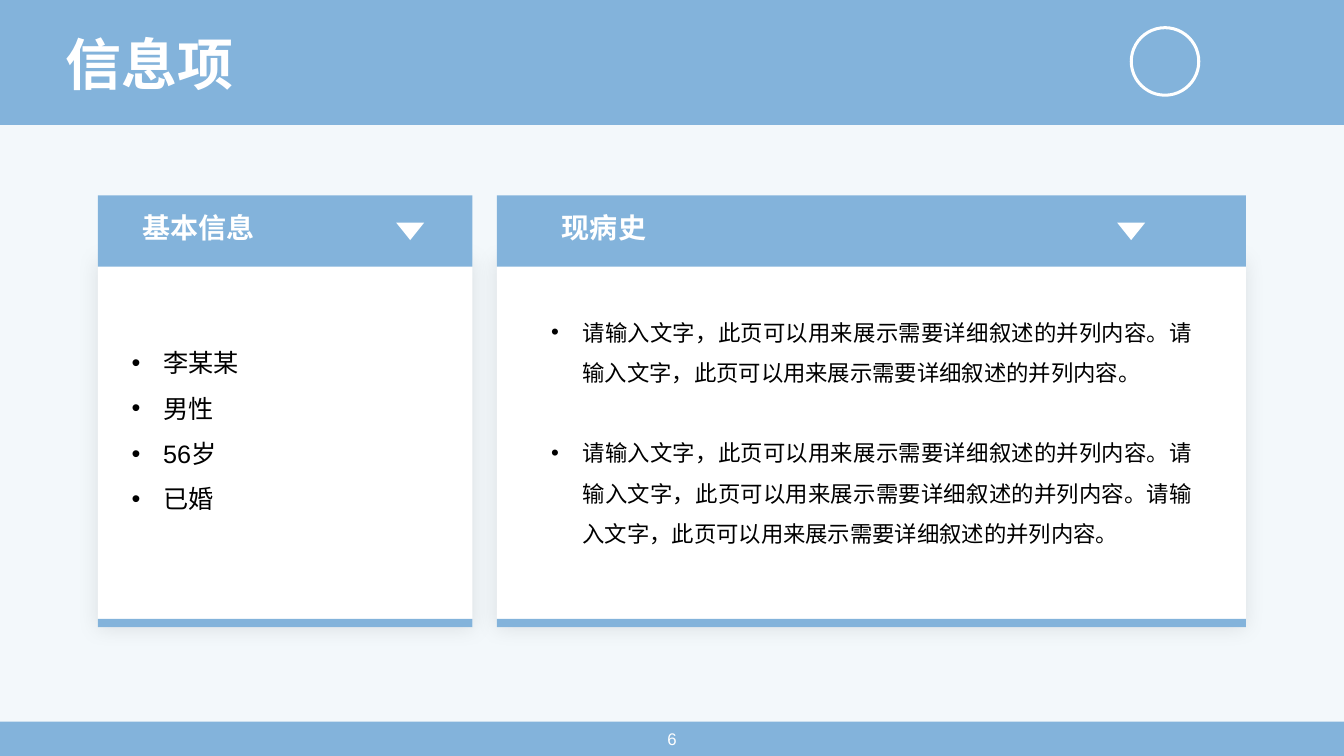
from lxml import etree
from pptx import Presentation
from pptx.dml.color import RGBColor
from pptx.enum.shapes import MSO_SHAPE
from pptx.enum.text import MSO_ANCHOR, MSO_AUTO_SIZE, PP_ALIGN
from pptx.oxml.ns import qn
from pptx.util import Pt

RECT, TRIANGLE, DONUT = MSO_SHAPE.RECTANGLE, MSO_SHAPE.ISOSCELES_TRIANGLE, MSO_SHAPE.DONUT
LEFT, CENTER, JUSTIFY = PP_ALIGN.LEFT, PP_ALIGN.CENTER, PP_ALIGN.JUSTIFY
TOP, MIDDLE = MSO_ANCHOR.TOP, MSO_ANCHOR.MIDDLE
NO_FIT, GROW = MSO_AUTO_SIZE.NONE, MSO_AUTO_SIZE.SHAPE_TO_FIT_TEXT

BLUE, WHITE, BLACK = "83B3DB", "FFFFFF", "000000"
CJK = "Noto Sans CJK SC"
INDENT = 22.5


def rgb(value):
    return RGBColor.from_string(value)


def add_node(parent, tag, **attributes):
    node = etree.SubElement(parent, qn(tag))
    for name, value in attributes.items():
        node.set(name, str(value))
    return node


class Deck:
    """Holds the style and the current slide."""

    def __init__(self, width, height, font="Arial"):
        self.prs = Presentation()
        self.prs.slide_width, self.prs.slide_height = Pt(width), Pt(height)
        self.font = font

    def new_slide(self, color):
        self.s = self.prs.slides.add_slide(self.prs.slide_layouts[6])
        fill = self.s.background.fill
        fill.solid()
        fill.fore_color.rgb = rgb(color)

    def shape(self, kind, x, y, w, h, color, alpha=None):
        sp = self.s.shapes.add_shape(kind, Pt(x), Pt(y), Pt(w), Pt(h))
        sp.shadow.inherit = False
        sp.fill.solid()
        sp.fill.fore_color.rgb = rgb(color)
        sp.line.fill.background()
        if alpha is not None:
            node = sp._element.spPr.find(".//" + qn("a:srgbClr"))
            add_node(node, "a:alpha", val=alpha * 1000)
        return sp

    def soft_shadow(self, sp, blur, alpha):
        effects = sp._element.spPr.find(qn("a:effectLst"))
        shadow = add_node(effects, "a:outerShdw", blurRad=Pt(blur), dist=0, dir=0,
                          algn="ctr", rotWithShape=0)
        color = add_node(shadow, "a:srgbClr", val=BLACK)
        add_node(color, "a:alpha", val=alpha * 1000)

    def text(self, x, y, w, h, lines, size, color, bold=False, align=LEFT, anchor=TOP,
             font=None, wrap=True, fit=NO_FIT, spacing=None, gap=0, bullet=False):
        tf = self.s.shapes.add_textbox(Pt(x), Pt(y), Pt(w), Pt(h)).text_frame
        tf.word_wrap, tf.auto_size, tf.vertical_anchor = wrap, fit, anchor
        for i, line in enumerate(lines):
            p = tf.paragraphs[0] if i == 0 else tf.add_paragraph()
            p.text, p.alignment = line, align
            if spacing:
                p.line_spacing = spacing
            if i and gap:
                p.space_before = Pt(gap)
            if bullet:
                pPr = p._p.get_or_add_pPr()
                pPr.set("marL", str(Pt(INDENT)))
                pPr.set("indent", str(-Pt(INDENT)))
                add_node(pPr, "a:buFont", typeface="Arial")
                add_node(pPr, "a:buChar", char="•")
            f = p.font
            f.name, f.size, f.bold = font or self.font, Pt(size), bold
            f.color.rgb = rgb(color)
            add_node(f._element, "a:ea", typeface=CJK)

    def card(self, x, w, heading, heading_x, arrow_x):
        panel = self.shape(RECT, x, 186, w, 262, WHITE)
        self.soft_shadow(panel, blur=15, alpha=10)
        self.shape(RECT, x, 139.5, w, 51, BLUE)
        self.shape(RECT, x, 442, w, 6, BLUE)
        self.shape(TRIANGLE, arrow_x, 159, 20, 12.5, WHITE).rotation = 180
        self.text(heading_x, 147, 28 + 20 * len(heading), 35, [heading], 20, WHITE,
                  bold=True, align=CENTER, wrap=False, fit=GROW)

    def bullets(self, x, y, w, h, lines, size, gap=0):
        self.text(x, y, w, h, lines, size, BLACK, align=JUSTIFY, fit=GROW,
                  spacing=1.5, gap=gap, bullet=True)


def main():
    deck = Deck(960, 540)

    # Blue frame with a pale content area
    deck.new_slide(BLUE)
    deck.shape(RECT, 0, 89.3, 960, 426.2, WHITE, alpha=91)

    # Title, badge and page number
    deck.text(39.6, 24.5, 515.5, 47, ["信息项"], 40, WHITE, bold=True, anchor=MIDDLE,
              font=CJK, spacing=0.9)
    badge = deck.shape(DONUT, 807, 18.7, 50.4, 50.4, WHITE)
    badge.adjustments[0] = 0.043
    deck.text(372, 516, 216, 23, ["6"], 12, WHITE, align=CENTER, anchor=MIDDLE)

    # Basic information
    deck.card(70, 267.5, "基本信息", heading_x=88, arrow_x=283)
    deck.bullets(87, 234, 246, 134, ["李某某", "男性", "56岁", "已婚"], 18)

    # History of present illness
    deck.card(355, 535, "现病史", heading_x=387.5, arrow_x=798)
    sentence = "请输入文字，此页可以用来展示需要详细叙述的并列内容。"
    deck.bullets(386.5, 214.5, 472.5, 178.5, [sentence * 2, sentence * 3], 16, gap=28.8)

    deck.prs.save("out.pptx")


if __name__ == "__main__":
    main()
